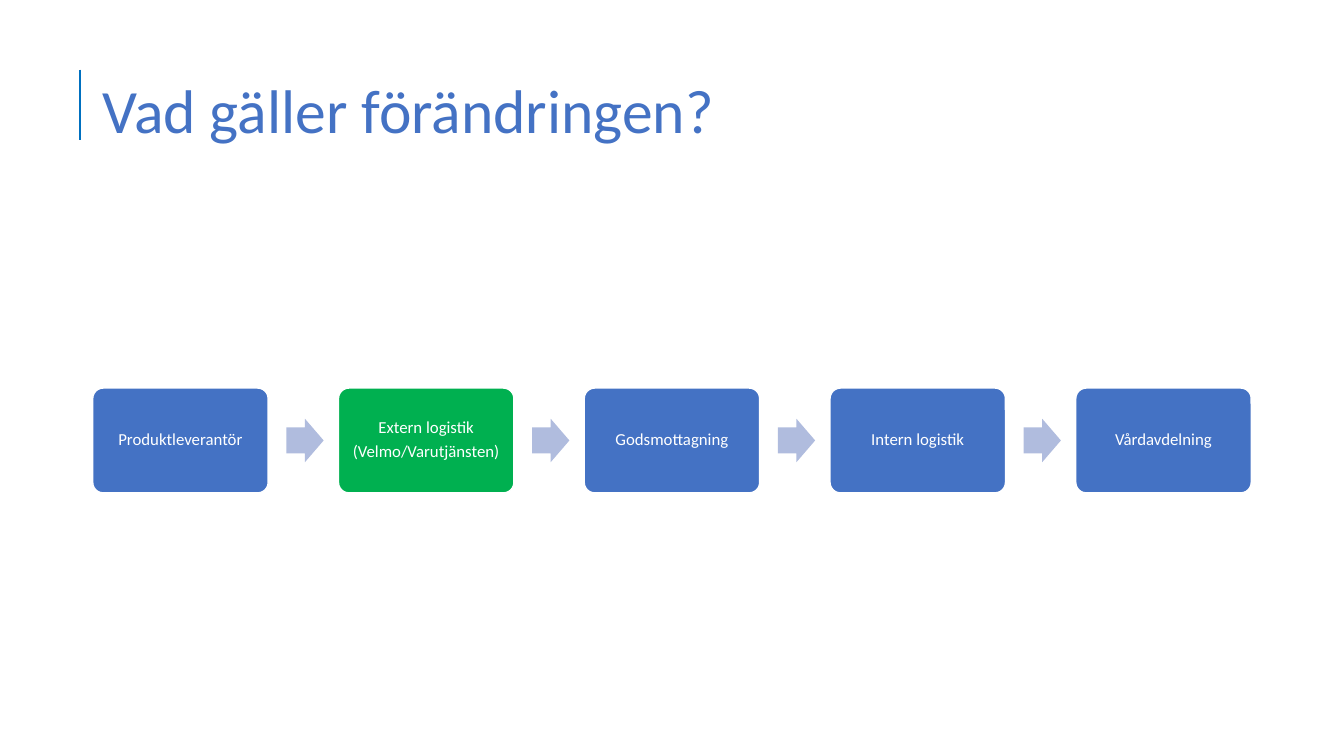
from pptx import Presentation
from pptx.dml.color import RGBColor
from pptx.enum.shapes import MSO_CONNECTOR, MSO_SHAPE
from pptx.enum.text import MSO_ANCHOR, PP_ALIGN
from pptx.oxml.ns import qn
from pptx.util import Inches, Pt
from lxml import etree

STRAIGHT = MSO_CONNECTOR.STRAIGHT
ROUNDED = MSO_SHAPE.ROUNDED_RECTANGLE
ARROW = MSO_SHAPE.RIGHT_ARROW
MIDDLE = MSO_ANCHOR.MIDDLE
CENTER = PP_ALIGN.CENTER
LEFT = PP_ALIGN.LEFT

BLUE, GREEN, WHITE = "4472C4", "00B050", "FFFFFF"
PALE_BLUE, RULE_BLUE = "B0BCDE", "0070C0"
FONT = "Calibri"

TITLE = "Vad gäller förändringen?"
STEPS = [
    (["Produktleverantör"], BLUE),
    (["Extern logistik", "(Velmo/Varutjänsten)"], GREEN),
    (["Godsmottagning"], BLUE),
    (["Intern logistik"], BLUE),
    (["Vårdavdelning"], BLUE),
]

FIRST_LEFT, LAST_LEFT = 0.92, 10.67
STEP_WIDTH, STEP_HEIGHT = 1.74, 1.04
MIDLINE = 4.37
ARROW_WIDTH, ARROW_HEIGHT, ARROW_GAP = 0.37, 0.43, 0.18
PITCH = (LAST_LEFT - FIRST_LEFT) / (len(STEPS) - 1)


def color(hex_string):
    return RGBColor.from_string(hex_string)


def write(box, lines, size, ink, align, space_after=0):
    frame = box.text_frame
    frame.word_wrap = True
    frame.vertical_anchor = MIDDLE
    for index, line in enumerate(lines):
        para = frame.paragraphs[0] if index == 0 else frame.add_paragraph()
        para.text = line
        para.alignment = align
        para.line_spacing = 0.9
        para.space_after = Pt(space_after)
        para.font.name = FONT
        para.font.size = Pt(size)
        para.font.color.rgb = color(ink)
    return frame


def add_block(page, kind, left, width, height, fill, adjustments):
    block = page.shapes.add_shape(
        kind, Inches(left), Inches(MIDLINE - height / 2), Inches(width), Inches(height)
    )
    block.shadow.inherit = False
    block.fill.solid()
    block.fill.fore_color.rgb = color(fill)
    block.line.fill.background()
    for index, value in enumerate(adjustments):
        block.adjustments[index] = value
    return block


def add_heading(page):
    rule = page.shapes.add_connector(
        STRAIGHT, Inches(0.79), Inches(0.69), Inches(0.79), Inches(1.39)
    )
    rule.line.color.rgb = color(RULE_BLUE)
    rule.line.width = Pt(1.5)
    etree.SubElement(rule._element.spPr, qn("a:effectLst"))
    title = page.shapes.add_textbox(Inches(0.92), Inches(0.4), Inches(11.5), Inches(1.45))
    write(title, [TITLE], 44, BLUE, LEFT)


def add_step(page, left, lines, fill):
    step = add_block(page, ROUNDED, left, STEP_WIDTH, STEP_HEIGHT, fill, [0.1])
    step.line.color.rgb = color(WHITE)
    step.line.width = Pt(1)
    frame = write(step, lines, 12, WHITE, CENTER, 4.2)
    frame.margin_left = frame.margin_right = Inches(0.05)
    frame.margin_top = frame.margin_bottom = Inches(0.05)


def main():
    deck = Presentation()
    deck.slide_width, deck.slide_height = Inches(13.33), Inches(7.5)
    page = deck.slides.add_slide(deck.slide_layouts[6])
    add_heading(page)
    for index, (lines, fill) in enumerate(STEPS):
        left = FIRST_LEFT + index * PITCH
        add_step(page, left, lines, fill)
        if index < len(STEPS) - 1:
            arrow_left = left + STEP_WIDTH + ARROW_GAP
            add_block(page, ARROW, arrow_left, ARROW_WIDTH, ARROW_HEIGHT, PALE_BLUE, [0.6, 0.5])
    deck.save("out.pptx")


if __name__ == "__main__":
    main()
